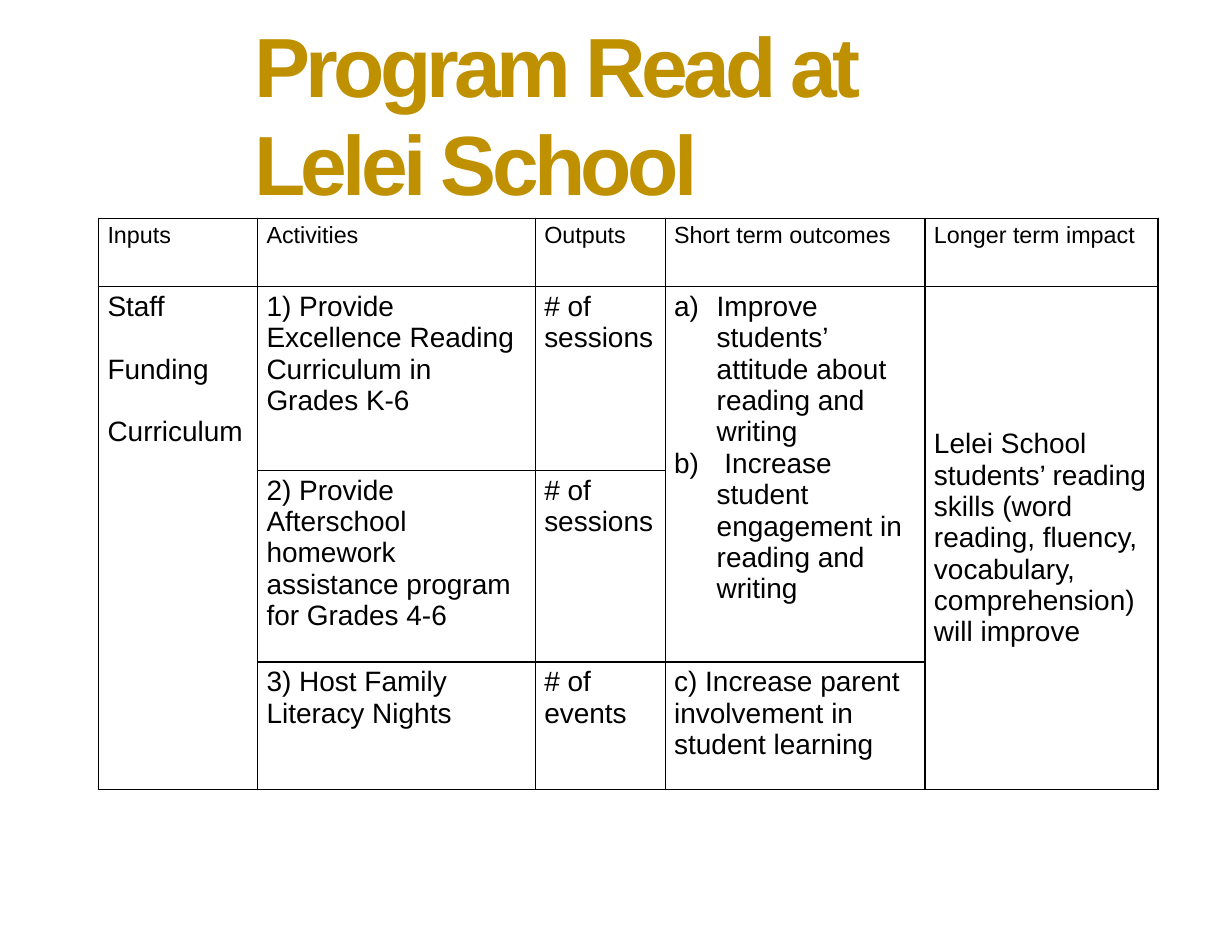
import dataclasses
import typing

import pptx
import pptx.dml.color
import pptx.enum.text
import pptx.oxml
import pptx.oxml.ns
import pptx.util

Inches = pptx.util.Inches
Pt = pptx.util.Pt
MIDDLE = pptx.enum.text.MSO_ANCHOR.MIDDLE
HUES = {"gold": "BF9000", "ink": "000000"}


@dataclasses.dataclass
class Deck:
    slide: typing.Any
    face: str = "Arial"
    side: float = 0.08
    edge: float = 0.04

    def style(self, para, size, hue, bold=False):
        font = para.font
        font.name = self.face
        font.size = Pt(size)
        font.bold = bold
        font.color.rgb = pptx.dml.color.RGBColor.from_string(HUES[hue])

    def pad(self, frame):
        frame.margin_left = frame.margin_right = Inches(self.side)
        frame.margin_top = frame.margin_bottom = Inches(self.edge)

    def title(self, text, left, top, width, height):
        box = self.slide.shapes.add_textbox(
            Inches(left), Inches(top), Inches(width), Inches(height))
        frame = box.text_frame
        frame.word_wrap = True
        frame.vertical_anchor = MIDDLE
        self.pad(frame)
        para = frame.paragraphs[0]
        para.line_spacing = 0.97
        run = para.add_run()
        run.text = text
        run._r.get_or_add_rPr().set("spc", "-300")
        self.style(para, 54, "gold", True)

    def border(self, cell):
        props = cell._tc.get_or_add_tcPr()
        for spot, side in enumerate("LRTB"):
            line = pptx.oxml.parse_xml(
                f'<a:ln{side} {pptx.oxml.ns.nsdecls("a")} w="12700">'
                f'<a:solidFill><a:srgbClr val="{HUES["ink"]}"/></a:solidFill>'
                f'</a:ln{side}>')
            props.insert(spot, line)

    def number(self, para):
        props = para._p.get_or_add_pPr()
        props.set("marL", str(Inches(0.38)))
        props.set("indent", str(-Inches(0.38)))
        props.append(pptx.oxml.parse_xml(
            f'<a:buAutoNum {pptx.oxml.ns.nsdecls("a")} type="alphaLcParenR"/>'))

    def fill(self, cell, lines, size, gap=0, listed=False):
        frame = cell.text_frame
        for spot, text in enumerate(lines):
            para = frame.add_paragraph() if spot else frame.paragraphs[0]
            para.text = text
            if spot and gap:
                para.space_before = Pt(gap)
            if listed:
                self.number(para)
            self.style(para, size, "ink")

    def table(self, left, top, cols, rows):
        frame = self.slide.shapes.add_table(
            len(rows), len(cols), Inches(left), Inches(top),
            Inches(sum(cols)), Inches(sum(rows)))
        grid = frame.table
        grid.first_row = grid.horz_banding = False
        for col, width in zip(grid.columns, cols):
            col.width = Inches(width)
        for row, height in zip(grid.rows, rows):
            row.height = Inches(height)
        for cell in grid.iter_cells():
            self.pad(cell)
            cell.fill.background()
            self.border(cell)
        return grid


show = pptx.Presentation()
show.slide_width = Inches(11)
show.slide_height = Inches(8.5)
deck = Deck(show.slides.add_slide(show.slide_layouts[6]))

deck.title("Program Read at Lelei School", 2.19, 0.53, 6.53, 1.03)

grid = deck.table(0.88, 1.95, [1.42, 2.48, 1.16, 2.32, 2.08],
                  [0.61, 1.64, 1.71, 1.14])
for first, last in [((1, 0), (3, 0)), ((1, 3), (2, 3)), ((1, 4), (3, 4))]:
    grid.cell(*first).merge(grid.cell(*last))

heads = ["Inputs", "Activities", "Outputs", "Short term outcomes",
         "Longer term impact"]
for col, text in enumerate(heads):
    deck.fill(grid.cell(0, col), [text], 15)

tasks = [
    ("1) Provide Excellence Reading Curriculum in Grades K-6", "# of sessions"),
    ("2) Provide Afterschool homework assistance program for Grades 4-6",
     "# of sessions"),
    ("3) Host Family Literacy Nights", "# of events"),
]
for row, pair in enumerate(tasks, 1):
    for col, text in enumerate(pair, 1):
        deck.fill(grid.cell(row, col), [text], 18)

deck.fill(grid.cell(1, 0), ["Staff", "Funding", "Curriculum"], 18, gap=20)
deck.fill(grid.cell(1, 3), [
    "Improve students’ attitude about reading and writing",
    " Increase student engagement in reading and writing"], 18, listed=True)
deck.fill(grid.cell(3, 3),
          ["c) Increase parent involvement in student learning"], 18)
impact = grid.cell(1, 4)
impact.vertical_anchor = MIDDLE
deck.fill(impact, [
    "Lelei School students’ reading skills (word reading, fluency, "
    "vocabulary, comprehension) will improve"], 18)

show.save("out.pptx")
